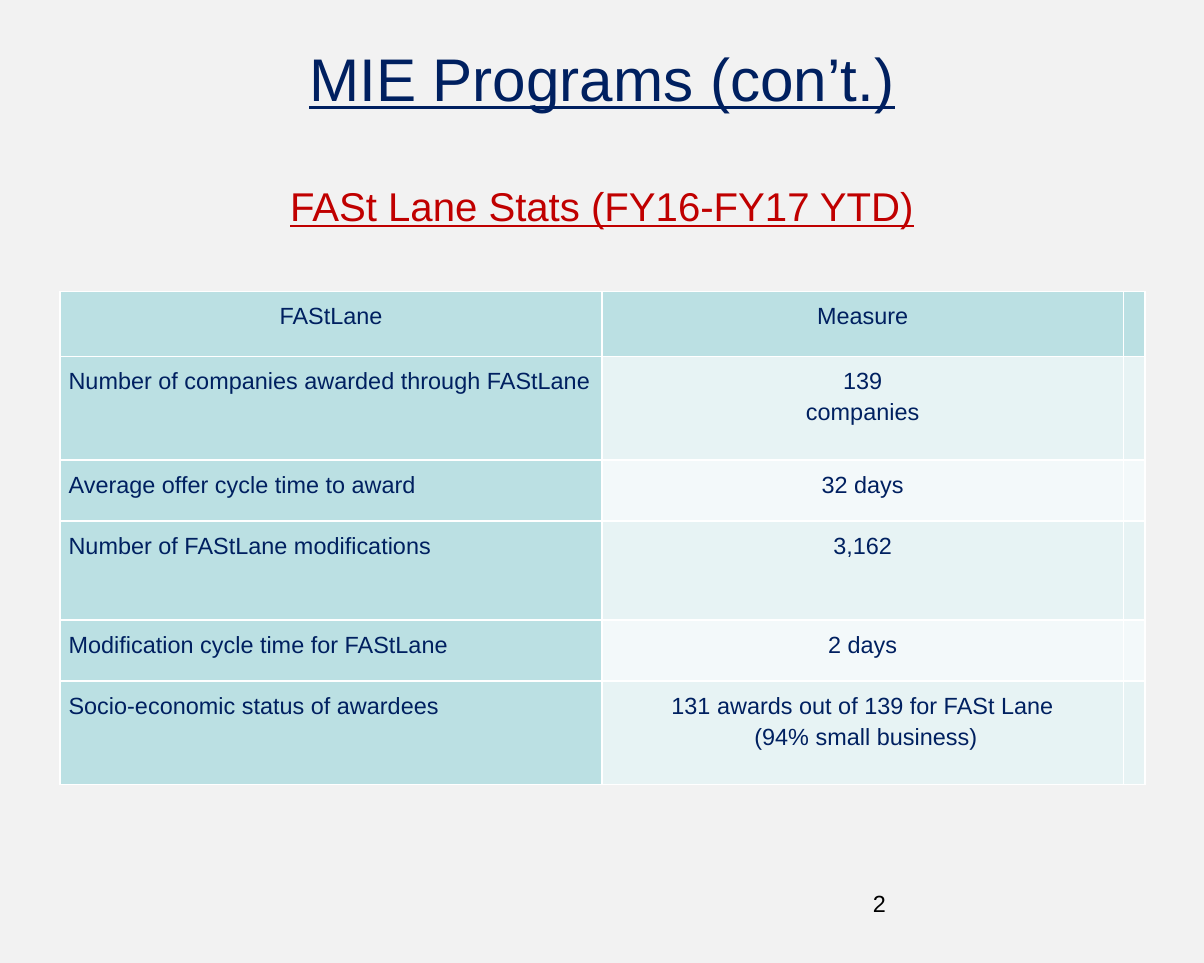
import pptx
import pptx.util
import pptx.dml.color
import pptx.enum.text
import pptx.oxml
import pptx.oxml.ns
import lxml.etree

Inches, Pt = pptx.util.Inches, pptx.util.Pt
ALIGN = pptx.enum.text.PP_ALIGN
ANCHOR = pptx.enum.text.MSO_ANCHOR

TITLE = "MIE Programs (con’t.)"
SUBTITLE = "FASt Lane Stats (FY16-FY17 YTD)"
PAGE = "2"
ROWS = [
    ("FAStLane", "Measure", ""),
    ("Number of companies awarded through FAStLane", "139\ncompanies", ""),
    ("Average offer cycle time to award", "32\u00a0days", ""),
    ("Number of FAStLane modifications", "3,162", ""),
    ("Modification cycle time for FAStLane", "2 days", ""),
    ("Socio-economic status of awardees",
     "131 awards out of 139 for FASt Lane\n (94% small business)", ""),
]
COLORS = {"page": "F2F2F2", "navy": "002060", "red": "C00000", "black": "000000",
          "head": "BBE0E3", "odd": "E7F3F4", "even": "F3F9FA", "rule": "FFFFFF"}

WIDTH, HEIGHT = 10, 8
MARGIN = WIDTH * 0.05
CONTENT_W = WIDTH - 2 * MARGIN
COLS = [4.5, 4.33, 0.17]
ROW_HEIGHTS = [0.54, 0.86, 0.51, 0.82, 0.51, 0.86]
TABLE_TOP = 2.42
CELL_INSET = 0.07


def rgb(name):
    return pptx.dml.color.RGBColor.from_string(COLORS[name])


def write(tf, text, size=14, color="navy", align=ALIGN.LEFT, underline=None, spacing=None):
    for i, line in enumerate(text.split("\n")):
        p = tf.paragraphs[0] if i == 0 else tf.add_paragraph()
        p.alignment, p.line_spacing = align, spacing
        p.space_before = Pt(0)
        r = p.add_run()
        r.text = line
        r.font.name, r.font.size = "Arial", Pt(size)
        r.font.color.rgb, r.font.underline = rgb(color), underline


def place(sp, x, y, w, h, inset=0.1, top=0.1, anchor=ANCHOR.TOP):
    sp.left, sp.top, sp.width, sp.height = map(Inches, (x, y, w, h))
    tf = sp.text_frame
    tf.word_wrap, tf.vertical_anchor = True, anchor
    tf.auto_size = pptx.enum.text.MSO_AUTO_SIZE.NONE
    tf.margin_left = tf.margin_right = tf.margin_bottom = Inches(inset)
    tf.margin_top = Inches(top)
    return tf


def add_borders(cell):
    tcPr = cell._tc.get_or_add_tcPr()
    for i, side in enumerate(("lnL", "lnR", "lnT", "lnB")):
        tcPr.insert(i, pptx.oxml.parse_xml(
            f'<a:{side} {pptx.oxml.ns.nsdecls("a")} w="{Pt(1)}"><a:solidFill>'
            f'<a:srgbClr val="{COLORS["rule"]}"/></a:solidFill></a:{side}>'))


def add_stats_table(s):
    table = s.shapes.add_table(
        len(ROWS), len(COLS), Inches(MARGIN), Inches(TABLE_TOP),
        Inches(CONTENT_W), Inches(sum(ROW_HEIGHTS))).table
    for col, w in zip(table.columns, COLS):
        col.width = Inches(w)
    for i, (values, h) in enumerate(zip(ROWS, ROW_HEIGHTS)):
        table.rows[i].height = Inches(h)
        for j, text in enumerate(values):
            cell = table.cell(i, j)
            cell.margin_left = cell.margin_right = Inches(CELL_INSET)
            cell.margin_top = cell.margin_bottom = Inches(CELL_INSET)
            cell.fill.solid()
            fill = "head" if i == 0 or j == 0 else "odd" if i % 2 else "even"
            cell.fill.fore_color.rgb = rgb(fill)
            add_borders(cell)
            if text:
                align = ALIGN.LEFT if i and j == 0 else ALIGN.CENTER
                write(cell.text_frame, text, align=align, spacing=1.15)


def main():
    prs = pptx.Presentation()
    prs.slide_width, prs.slide_height = Inches(WIDTH), Inches(HEIGHT)
    s = prs.slides.add_slide(prs.slide_layouts[1])
    s.background.fill.solid()
    s.background.fill.fore_color.rgb = rgb("page")

    tf = place(s.shapes.title, MARGIN, 0.17, CONTENT_W, 1.49, top=0.17)
    write(tf, TITLE, size=36, align=ALIGN.CENTER, underline=True)

    tf = place(s.placeholders[1], MARGIN, 0.92, CONTENT_W, 6.23, top=0.59)
    write(tf, SUBTITLE, size=24, color="red", align=ALIGN.CENTER, underline=True)
    pPr = tf.paragraphs[0]._p.get_or_add_pPr()
    pPr.set("marL", "0")
    pPr.set("indent", "0")
    lxml.etree.SubElement(pPr, pptx.oxml.ns.qn("a:buNone"))

    add_stats_table(s)

    page = s.shapes.add_textbox(0, 0, 0, 0)
    tf = place(page, 7.25, 7.25, 2, 0.5, inset=0, top=0, anchor=ANCHOR.MIDDLE)
    write(tf, PAGE, color="black")
    prs.save("out.pptx")


if __name__ == "__main__":
    main()
